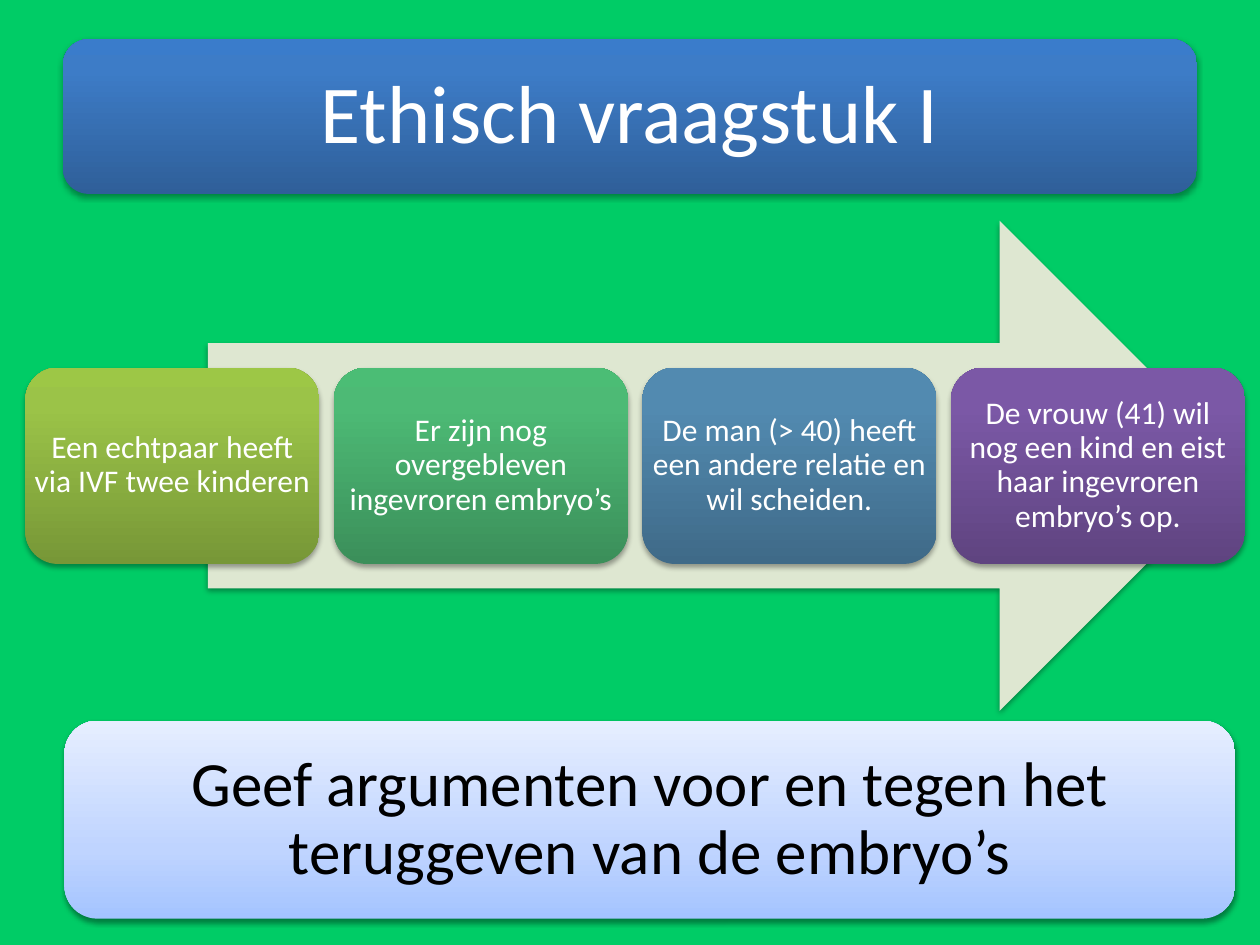
"""Build a slide on an ethical question: a title, four steps on an arrow and a task."""
from lxml.etree import SubElement
from pptx import Presentation
from pptx.dml.color import RGBColor
from pptx.enum.shapes import MSO_SHAPE
from pptx.enum.text import MSO_ANCHOR, MSO_AUTO_SIZE, PP_ALIGN
from pptx.oxml.ns import qn
from pptx.util import Cm, Pt


def panel(kind, area, stops, alpha=35):
    shape = slide.shapes.add_shape(kind, *map(Cm, area))
    shape.line.fill.background()
    shape.shadow.inherit = False
    props = shape._element.spPr
    shade = SubElement(props.find(qn("a:effectLst")), qn("a:outerShdw"),
                       blurRad=str(Pt(3.1)), dist=str(Pt(1.8)),
                       dir="5400000", rotWithShape="0")
    tint = SubElement(shade, qn("a:srgbClr"), val="000000")
    SubElement(tint, qn("a:alpha"), val=str(alpha * 1000))
    if len(stops) == 1:
        shape.fill.solid()
        shape.fill.fore_color.rgb = RGBColor.from_string(stops[0][1])
        return
    shape.fill.gradient()
    shape.fill.gradient_angle = 90
    ramp = props.find(".//" + qn("a:gsLst"))
    ramp.clear()
    for place, color in stops:
        stop = SubElement(ramp, qn("a:gs"), pos=str(place * 1000))
        SubElement(stop, qn("a:srgbClr"), val=color)


def write(box, area, text, size, color, inset):
    box.left, box.top, box.width, box.height = map(Cm, area)
    frame = box.text_frame
    frame.text = text
    look = {"word_wrap": True, "auto_size": MSO_AUTO_SIZE.NONE,
            "vertical_anchor": MSO_ANCHOR.MIDDLE}
    for side in ("left", "top", "right", "bottom"):
        look["margin_" + side] = Cm(inset)
    for name, value in look.items():
        setattr(frame, name, value)
    para = frame.paragraphs[0]
    para.alignment = PP_ALIGN.CENTER
    para.line_spacing = 0.9
    font = para.runs[0].font
    for name, value in {"size": Pt(size), "name": "Calibri"}.items():
        setattr(font, name, value)
    font.color.rgb = RGBColor.from_string(color)


deck = Presentation()
deck.slide_width, deck.slide_height = Cm(25.4), Cm(19.05)
slide = deck.slides.add_slide(deck.slide_layouts[5])
slide.background.fill.solid()
slide.background.fill.fore_color.rgb = RGBColor.from_string("00CC66")

head = (1.27, 0.79, 22.86, 3.12)
panel(MSO_SHAPE.ROUNDED_RECTANGLE, head,
      [(0, "2F5F99"), (80, "3D7CC7"), (100, "3A7CCB")])
title = slide.shapes.title
slide.shapes._spTree.append(title._element)
write(title, head, "Ethisch vraagstuk I", 47, "FFFFFF", 0.51)

panel(MSO_SHAPE.RIGHT_ARROW, (4.19, 4.45, 20.9, 9.88), [(0, "DEE7D1")])
steps = [
    ("Een echtpaar heeft via IVF twee kinderen", "779737", "9BC348", "9DC746"),
    ("Er zijn nog overgebleven ingevroren embryo’s", "3B8F5A", "4DBA75", "4BBD75"),
    ("De man (> 40) heeft een andere relatie en wil scheiden.",
     "3F6A88", "528AB0", "518BB3"),
    ("De vrouw (41) wil nog een kind en eist haar ingevroren embryo’s op.",
     "5F4480", "7B58A6", "7C57A8"),
]
for index, (text, *colors) in enumerate(steps):
    area = (0.51 + index * 6.22, 7.41, 5.93, 3.96)
    panel(MSO_SHAPE.ROUNDED_RECTANGLE, area, list(zip((0, 80, 100), colors)))
    box = slide.shapes.add_textbox(*map(Cm, area))
    write(box, area, text, 18, "FFFFFF", 0.18)

task = (1.3, 14.53, 23.6, 3.99)
panel(MSO_SHAPE.ROUNDED_RECTANGLE, task,
      [(0, "A4C4FF"), (35, "BFD4FF"), (100, "E6EEFF")], 38)
box = slide.shapes.add_textbox(*map(Cm, task))
write(box, task, "Geef argumenten voor en tegen het teruggeven van de embryo’s",
      36, "000000", 0.38)

deck.save("out.pptx")
